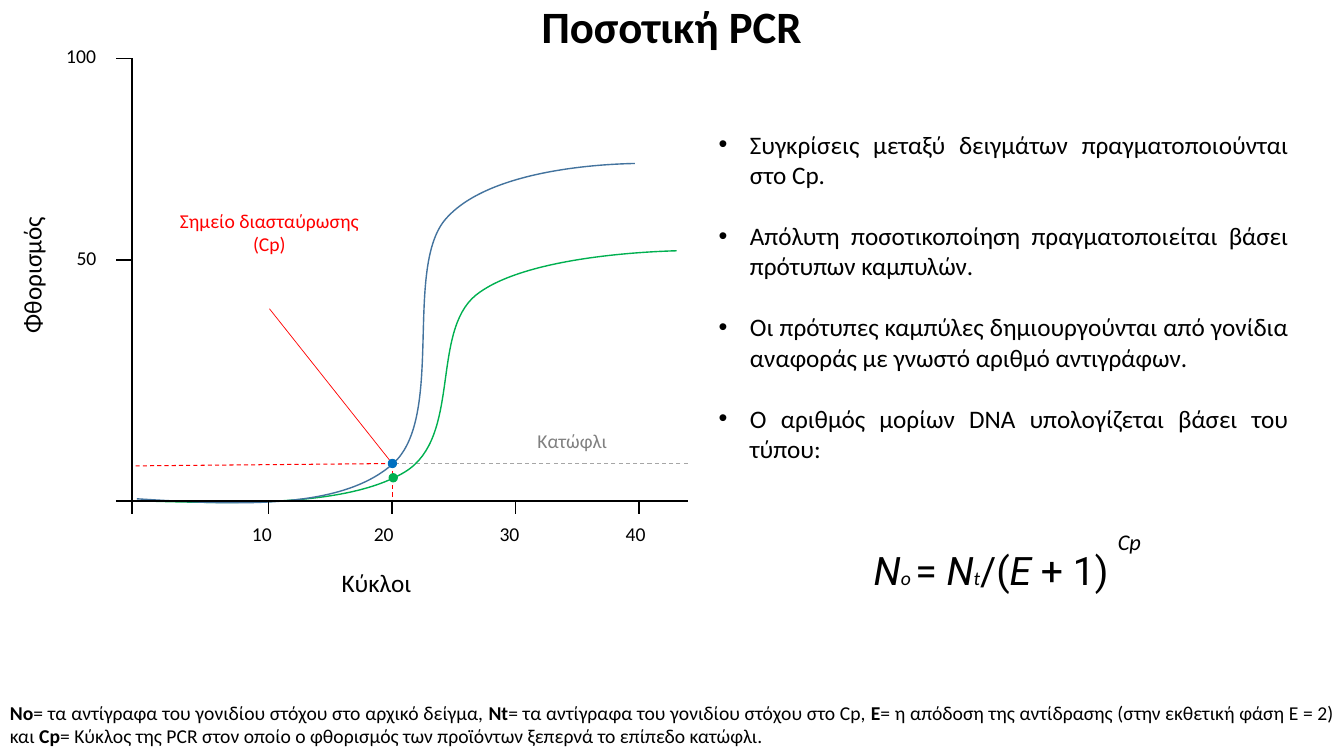
"""Build the quantitative PCR slide with its amplification curves and formula."""
import lxml.etree
import pptx
import pptx.dml.color
import pptx.enum.dml
import pptx.enum.shapes
import pptx.enum.text
import pptx.oxml.ns
import pptx.util

Cm = pptx.util.Cm
qn = pptx.oxml.ns.qn
Align = pptx.enum.text.PP_ALIGN

COLORS = {"black": "000000", "red": "FF0000", "grey": "808080", "threshold": "A6A6A6",
          "green": "00B050", "curve_blue": "43739E", "point_blue": "0070C0"}

TITLE = "Ποσοτική PCR"
BULLETS = [
    "Συγκρίσεις μεταξύ δειγμάτων πραγματοποιούνται στο Cp.",
    "Απόλυτη ποσοτικοποίηση πραγματοποιείται βάσει πρότυπων καμπυλών.",
    "Οι πρότυπες καμπύλες δημιουργούνται από γονίδια αναφοράς με γνωστό αριθμό αντιγράφων.",
    "Ο αριθμός μορίων DNA υπολογίζεται βάσει του τύπου:",
]
SYMBOL = {"size": 28, "font": "Roboto", "italic": True}
OPERATOR = {"size": 28, "font": "Roboto"}
SUBSCRIPT = {"size": 14, "italic": True}
FORMULA = [("N", SYMBOL), ("o ", SUBSCRIPT), ("= ", OPERATOR), ("N", SYMBOL),
           ("t", SUBSCRIPT), ("/(", OPERATOR), ("E ", SYMBOL), ("+ 1)", OPERATOR)]
DEFINITIONS = [
    ("Νο", "= τα αντίγραφα του γονιδίου στόχου στο αρχικό δείγμα, "),
    ("Nt", "= τα αντίγραφα του γονιδίου στόχου στο Cp, "),
    ("E", "= η απόδοση της αντίδρασης (στην εκθετική φάση E = 2) και "),
    ("Cp", "= Κύκλος της PCR στον οποίο ο φθορισμός των προϊόντων ξεπερνά το επίπεδο κατώφλι. "),
]

AXIS_X, AXIS_Y = 3.33, 12.62
AXIS_LEFT, AXIS_RIGHT, AXIS_TOP, AXIS_BOTTOM = 2.92, 17.33, 1.47, 12.95
FIRST_TICK, TICK_STEP = 6.77, 3.11
CYCLES = [("10", 6.1), ("20", 9.17), ("30", 12.34), ("40", 15.52)]
FLUORESCENCE = [("100", 1.42, AXIS_TOP), ("50", 1.68, 6.55)]
CROSSING_X, CROSSING_Y = 9.89, 11.68

CURVES = [
    ("green", [(3.48, 12.62), (6.12, 12.7), (8.79, 12.75), (10.21, 11.89), (11.63, 11.02),
               (10.85, 8.38), (11.99, 7.44), (13.13, 6.53), (15.95, 6.35), (17.05, 6.32)]),
    ("curve_blue", [(3.45, 12.57), (6.02, 12.73), (8.61, 12.85), (9.91, 11.68), (11.2, 10.52),
                    (10.19, 6.83), (11.2, 5.56), (12.22, 4.32), (14.96, 4.14), (16, 4.12)]),
]
POINTS = [("point_blue", 9.79, 11.58), ("green", 9.81, 11.94)]
POINT_SIZE = 0.2
GUIDES = [
    ((AXIS_RIGHT, CROSSING_Y), (9.78, CROSSING_Y), "threshold", 0.75, True),
    ((CROSSING_X, CROSSING_Y), (AXIS_X, 11.74), "red", 0.75, True),
    ((CROSSING_X, CROSSING_Y), (CROSSING_X, AXIS_Y), "red", 0.75, True),
    ((6.79, 7.78), (9.83, 11.61), "red", 0.5, False),
]
AXES = [((AXIS_LEFT, AXIS_Y), (AXIS_RIGHT, AXIS_Y)), ((AXIS_X, AXIS_TOP), (AXIS_X, AXIS_BOTTOM))]
LABELS = [
    ("Κύκλοι", (8.36, 14.17, 2.92, 1.32), {"size": 18}),
    ("Σημείο διασταύρωσης (Cp)", (4.07, 5.13, 5.44, 2.67),
     {"color_name": "red", "align": Align.CENTER}),
    ("Κατώφλι", (11.7, 10.69, 5.44, 1.12), {"color_name": "grey", "align": Align.CENTER}),
    ("Cp", (27.92, 13.18, 1.24, 0.94), {"size": 16, "italic": True}),
]


def color(name):
    return pptx.dml.color.RGBColor.from_string(COLORS[name])


def add_run(paragraph, text, size=14, font="Calibri", color_name="black", bold=False, italic=False):
    run = paragraph.add_run()
    run.text = text
    run.font.size = pptx.util.Pt(size)
    run.font.name = font
    run.font.bold = bold
    run.font.italic = italic
    run.font.color.rgb = color(color_name)


def add_text(slide, text, box, align=Align.LEFT, **formatting):
    """Add a text box holding one string or a list of (text, format) runs."""
    shape = slide.shapes.add_textbox(*map(Cm, box))
    shape.text_frame.word_wrap = True
    paragraph = shape.text_frame.paragraphs[0]
    paragraph.alignment = align
    runs = [(text, formatting)] if isinstance(text, str) else text
    for run_text, run_format in runs:
        add_run(paragraph, run_text, **run_format)
    return shape


def add_line(slide, start, end, color_name="black", width=1.0, dashed=False):
    connector = slide.shapes.add_connector(
        pptx.enum.shapes.MSO_CONNECTOR.STRAIGHT, *map(Cm, start + end))
    connector.line.color.rgb = color(color_name)
    connector.line.width = pptx.util.Pt(width)
    if dashed:
        connector.line.dash_style = pptx.enum.dml.MSO_LINE.DASH
    lxml.etree.SubElement(connector.element.spPr, qn("a:effectLst"))


def add_curve(slide, color_name, controls):
    """Add a cubic curve by joining each three line targets into one Bézier segment."""
    points = [(Cm(x), Cm(y)) for x, y in controls]
    builder = slide.shapes.build_freeform(*points[0])
    builder.add_line_segments(points[1:], close=False)
    shape = builder.convert_to_shape()
    targets = list(shape.element.iter(qn("a:lnTo")))
    for first in range(0, len(targets), 3):
        segment = targets[first]
        bezier = lxml.etree.SubElement(segment.getparent(), qn("a:cubicBezTo"))
        for target in targets[first:first + 3]:
            bezier.append(target[0])
            target.getparent().remove(target)
    shape.fill.background()
    format_outline(shape, color_name)


def format_outline(shape, color_name):
    shape.shadow.inherit = False
    shape.line.color.rgb = color(color_name)
    shape.line.width = pptx.util.Pt(1)


def add_point(slide, color_name, left, top):
    shape = slide.shapes.add_shape(pptx.enum.shapes.MSO_SHAPE.OVAL,
                                   *map(Cm, (left, top, POINT_SIZE, POINT_SIZE)))
    shape.fill.solid()
    shape.fill.fore_color.rgb = color(color_name)
    format_outline(shape, color_name)


def add_title(slide):
    title = slide.shapes.title
    title.left, title.top, title.width, title.height = map(Cm, (3.12, 0, 27.62, 1.46))
    title.text_frame.vertical_anchor = pptx.enum.text.MSO_ANCHOR.MIDDLE
    title.text_frame.auto_size = pptx.enum.text.MSO_AUTO_SIZE.NONE
    paragraph = title.text_frame.paragraphs[0]
    paragraph.alignment = Align.CENTER
    paragraph.line_spacing = 0.9
    add_run(paragraph, TITLE, size=32, bold=True)


def add_bullets(slide):
    frame = slide.shapes.add_textbox(*map(Cm, (17.86, 3.13, 14.86, 9.5))).text_frame
    frame.word_wrap = True
    for index, text in enumerate(BULLETS):
        paragraph = frame.add_paragraph() if index else frame.paragraphs[0]
        paragraph.alignment = Align.JUSTIFY
        paragraph.space_before = pptx.util.Pt(22 if index else 0)
        add_run(paragraph, text, size=18)
        properties = paragraph._p.get_or_add_pPr()
        properties.set("marL", str(Cm(0.79)))
        properties.set("indent", str(-Cm(0.79)))
        lxml.etree.SubElement(properties, qn("a:buFont")).set("typeface", "Arial")
        lxml.etree.SubElement(properties, qn("a:buChar")).set("char", "•")


def add_graph(slide):
    for start, end, color_name, width, dashed in GUIDES:
        add_line(slide, start, end, color_name, width, dashed)
    for color_name, controls in CURVES:
        add_curve(slide, color_name, controls)
    for start, end in AXES:
        add_line(slide, start, end, width=1.5)
    for text, left, y in FLUORESCENCE:
        add_line(slide, (AXIS_X, y), (AXIS_LEFT, y))
        add_text(slide, text, (left, y - 0.49, 2.2, 1.12))
    for index, (text, left) in enumerate(CYCLES):
        x = FIRST_TICK + index * TICK_STEP
        add_line(slide, (x, AXIS_Y), (x, AXIS_BOTTOM))
        add_text(slide, text, (left, 13.03, 1.3, 1.12))
    for point in POINTS:
        add_point(slide, *point)
    add_text(slide, "Φθορισμός", (-1.3, 6.27, 4.5, 1.32), Align.CENTER, size=18).rotation = 270


def main():
    presentation = pptx.Presentation()
    presentation.slide_width, presentation.slide_height = Cm(33.87), Cm(19.05)
    slide = presentation.slides.add_slide(presentation.slide_layouts[5])
    add_title(slide)
    add_bullets(slide)
    add_graph(slide)
    for text, box, formatting in LABELS:
        add_text(slide, text, box, **formatting)
    add_text(slide, FORMULA, (21.77, 13.64, 6.65, 1.45))
    definitions = [run for term, meaning in DEFINITIONS
                   for run in ((term, {"bold": True}), (meaning, {}))]
    add_text(slide, definitions, (0, 17.53, 33.87, 1.45), Align.JUSTIFY)
    presentation.save("out.pptx")


if __name__ == "__main__":
    main()
